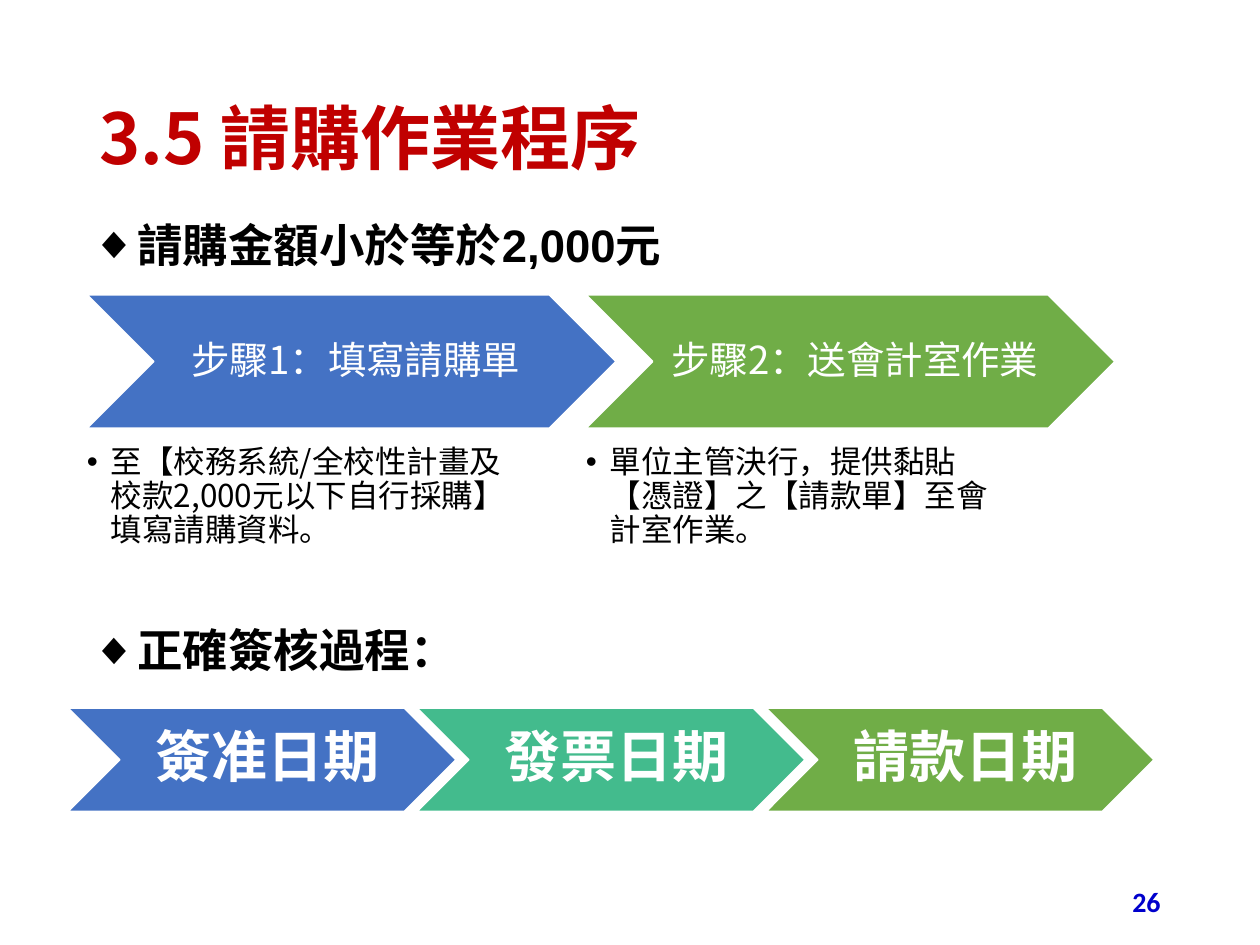
from lxml import etree
from pptx import Presentation
from pptx.dml.color import RGBColor
from pptx.enum.shapes import MSO_SHAPE
from pptx.enum.text import MSO_ANCHOR, MSO_AUTO_SIZE, PP_ALIGN
from pptx.oxml.ns import qn
from pptx.util import Inches, Pt

CHEVRON = MSO_SHAPE.CHEVRON
TOP, MIDDLE = MSO_ANCHOR.TOP, MSO_ANCHOR.MIDDLE
LEFT, CENTER, RIGHT = PP_ALIGN.LEFT, PP_ALIGN.CENTER, PP_ALIGN.RIGHT
NO_FIT = MSO_AUTO_SIZE.NONE

COLORS = {
    "title": "C00000", "page": "0000CC", "text": "000000", "white": "FFFFFF",
    "blue": "4472C4", "teal": "43BB8D", "green": "70AD47",
}
CJK = "Noto Sans CJK SC"

STEPS = [
    ("步驟1：填寫請購單", "blue",
     "至【校務系統/全校性計畫及校款2,000元以下自行採購】填寫請購資料。"),
    ("步驟2：送會計室作業", "green",
     "單位主管決行，提供黏貼【憑證】之【請款單】至會計室作業。"),
]
DATES = [("簽准日期", "blue"), ("發票日期", "teal"), ("請款日期", "green")]


def color(name):
    return RGBColor.from_string(COLORS[name])


def add_bullet(para, mark, indent):
    props = para._p.get_or_add_pPr()
    props.set("marL", str(Inches(indent)))
    props.set("indent", str(-Inches(indent)))
    etree.SubElement(props, qn("a:buFont")).set("typeface", "Arial")
    etree.SubElement(props, qn("a:buChar")).set("char", mark)


def write(shape, text, size, font=CJK, ink="text", bold=False, align=LEFT,
          anchor=TOP, inset=(0.1, 0.05, 0.1, 0.05), mark=None, indent=0,
          level=0, lines=0.9):
    frame = shape.text_frame
    frame.word_wrap = True
    frame.auto_size = NO_FIT
    frame.vertical_anchor = anchor
    (frame.margin_left, frame.margin_top,
     frame.margin_right, frame.margin_bottom) = map(Inches, inset)
    para = frame.paragraphs[0]
    para.level = level
    if mark:
        add_bullet(para, mark, indent)
    para.alignment = align
    para.line_spacing = lines
    para.space_before = Pt(0)
    run = para.add_run()
    run.text = text
    run.font.size = Pt(size)
    run.font.bold = bold
    run.font.name = font
    run.font.color.rgb = color(ink)
    east = etree.SubElement(run._r.get_or_add_rPr(), qn("a:ea"))
    east.set("typeface", CJK)


class Deck:
    head = dict(size=26, font="Arial", bold=True, mark="◆", indent=0.25)
    note = dict(size=18, mark="•", indent=0.19, level=1, inset=(0, 0, 0, 0))

    def __init__(self):
        self.prs = Presentation()
        self.prs.slide_width, self.prs.slide_height = Inches(10), Inches(7.5)
        self.slide = self.prs.slides.add_slide(self.prs.slide_layouts[1])

    def place(self, holder, box, text, **form):
        (holder.left, holder.top,
         holder.width, holder.height) = map(Inches, box)
        write(holder, text, **form)

    def title(self, box, text):
        self.place(self.slide.shapes.title, box, text, size=40, ink="title",
                   bold=True, anchor=MIDDLE)

    def body(self, box, text):
        self.place(self.slide.placeholders[1], box, text, **self.head)

    def text(self, box, text, group=None, **form):
        shapes = (group or self.slide).shapes
        write(shapes.add_textbox(*map(Inches, box)), text, **form)

    def group(self):
        return self.slide.shapes.add_group_shape()

    def chevron(self, group, box, text, fill, **form):
        """Draw a chevron with its label between the notch and the point."""
        left, top, width, height = box
        arrow = group.shapes.add_shape(CHEVRON, *map(Inches, box))
        arrow.shadow.inherit = False
        arrow.fill.solid()
        arrow.fill.fore_color.rgb = color(fill)
        arrow.line.color.rgb = color("white")
        arrow.line.width = Pt(1)
        label = (left + height / 2, top, width - height, height)
        self.text(label, text, group, ink="white", align=CENTER,
                  anchor=MIDDLE, **form)


def main():
    deck = Deck()
    deck.title((0.69, 0.4, 8.62, 1.45), "3.5 請購作業程序")
    deck.text((7.06, 6.95, 2.25, 0.4), "26", size=16, font="Calibri",
              ink="page", bold=True, align=RIGHT, anchor=MIDDLE, lines=1.0)

    group = deck.group()
    for i, (name, fill, note) in enumerate(STEPS):
        left = 0.69 + 3.96 * i
        deck.chevron(group, (left, 2.34, 4.2, 1.06), name, fill, size=22,
                     inset=(0.1, 0.03, 0.03, 0.03))
        deck.text((left, 3.54, 3.36, 1.2), note, group, **deck.note)
    deck.body((0.63, 1.72, 8.53, 0.5), "請購金額小於等於2,000元")

    group = deck.group()
    for i, (name, fill) in enumerate(DATES):
        deck.chevron(group, (0.54 + 2.77 * i, 5.62, 3.08, 0.82), name, fill,
                     size=32, bold=True, inset=(0.14, 0.05, 0.05, 0.05))
    deck.text((0.63, 4.94, 8.53, 0.5), "正確簽核過程：", **deck.head)

    deck.prs.save("out.pptx")


if __name__ == "__main__":
    main()
